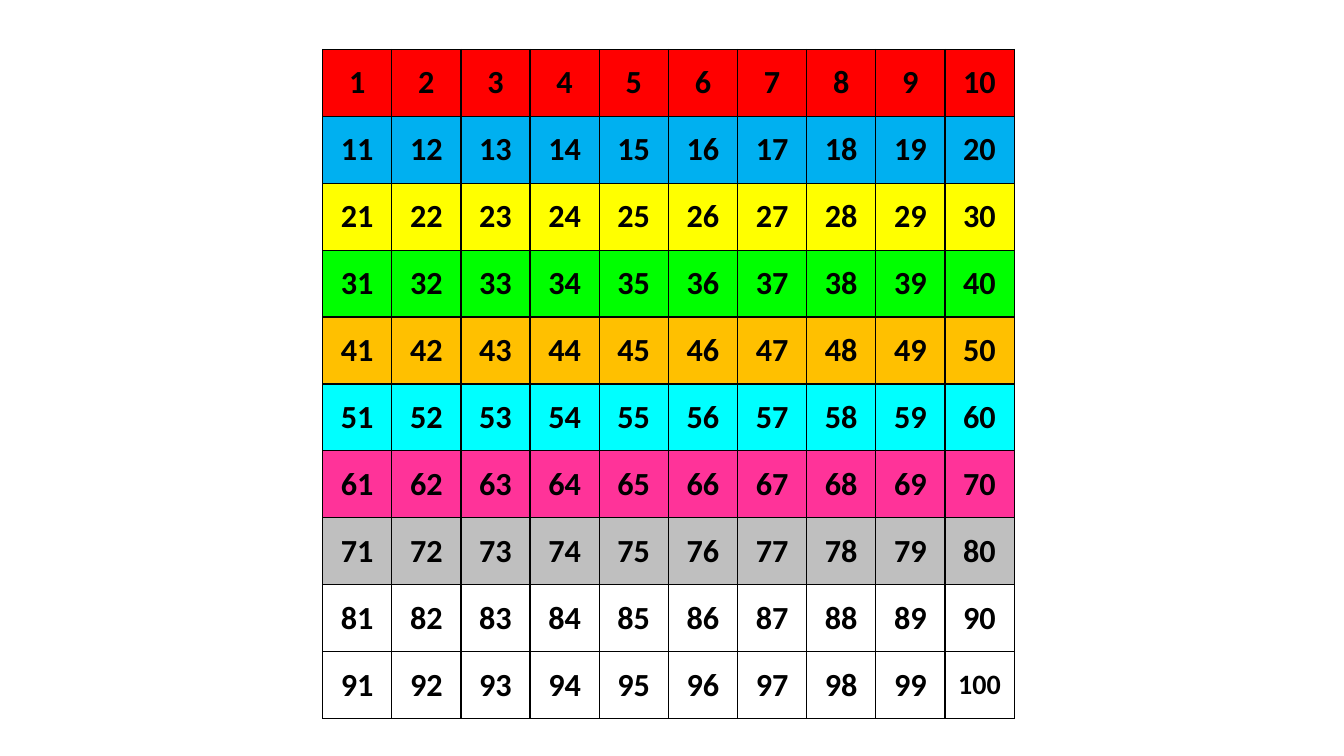
from pptx import Presentation
from pptx.dml.color import RGBColor as Rgb
from pptx.enum.text import MSO_ANCHOR as Anchor, PP_ALIGN as Align
from pptx.oxml.ns import qn
from pptx.util import Inches, Pt
from lxml.etree import SubElement as Sub

WIDE, HIGH = 13.33, 7.5
LEFT, TOP, COL, ROW = 3.2, 0.49, 0.686, 0.664
COUNT = 10
BANDS = ["FF0000", "00B0F0", "FFFF00", "00FF00", "FFC000",
         "00FFFF", "FF3399", "BFBFBF", None, None]
INK = "000000"
FONT = {"name": "Calibri", "bold": True}
SIZE, SMALL = 23, 20
CELL = {"vertical_anchor": Anchor.MIDDLE,
        "margin_left": Inches(0.13), "margin_right": Inches(0.13),
        "margin_top": Inches(0.06), "margin_bottom": Inches(0.06)}


def color(code):
    return Rgb.from_string(code)


def apply(item, style):
    for key, value in style.items():
        setattr(item, key, value)


def border(cell):
    props = cell._tc.get_or_add_tcPr()
    for side in ("lnL", "lnR", "lnT", "lnB"):
        line = Sub(props, qn(f"a:{side}"), w=str(Pt(1)))
        Sub(Sub(line, qn("a:solidFill")), qn("a:srgbClr"), val=INK)


def paint(cell, band):
    if band:
        cell.fill.solid()
        cell.fill.fore_color.rgb = color(band)
    else:
        cell.fill.background()


def write(cell, number):
    para = cell.text_frame.paragraphs[0]
    para.alignment = Align.CENTER
    run = para.add_run()
    run.text = str(number)
    apply(run.font, FONT)
    run.font.size = Pt(SIZE if number < 100 else SMALL)
    run.font.color.rgb = color(INK)


def main():
    deck = Presentation()
    deck.slide_width, deck.slide_height = Inches(WIDE), Inches(HIGH)
    slide = deck.slides.add_slide(deck.slide_layouts[6])
    table = slide.shapes.add_table(
        COUNT, COUNT, Inches(LEFT), Inches(TOP),
        Inches(COL * COUNT), Inches(ROW * COUNT)).table
    table.first_row = table.horz_banding = False
    for row, band in enumerate(BANDS):
        for col in range(COUNT):
            cell = table.cell(row, col)
            apply(cell, CELL)
            border(cell)
            paint(cell, band)
            write(cell, row * COUNT + col + 1)
    deck.save("out.pptx")


if __name__ == "__main__":
    main()
